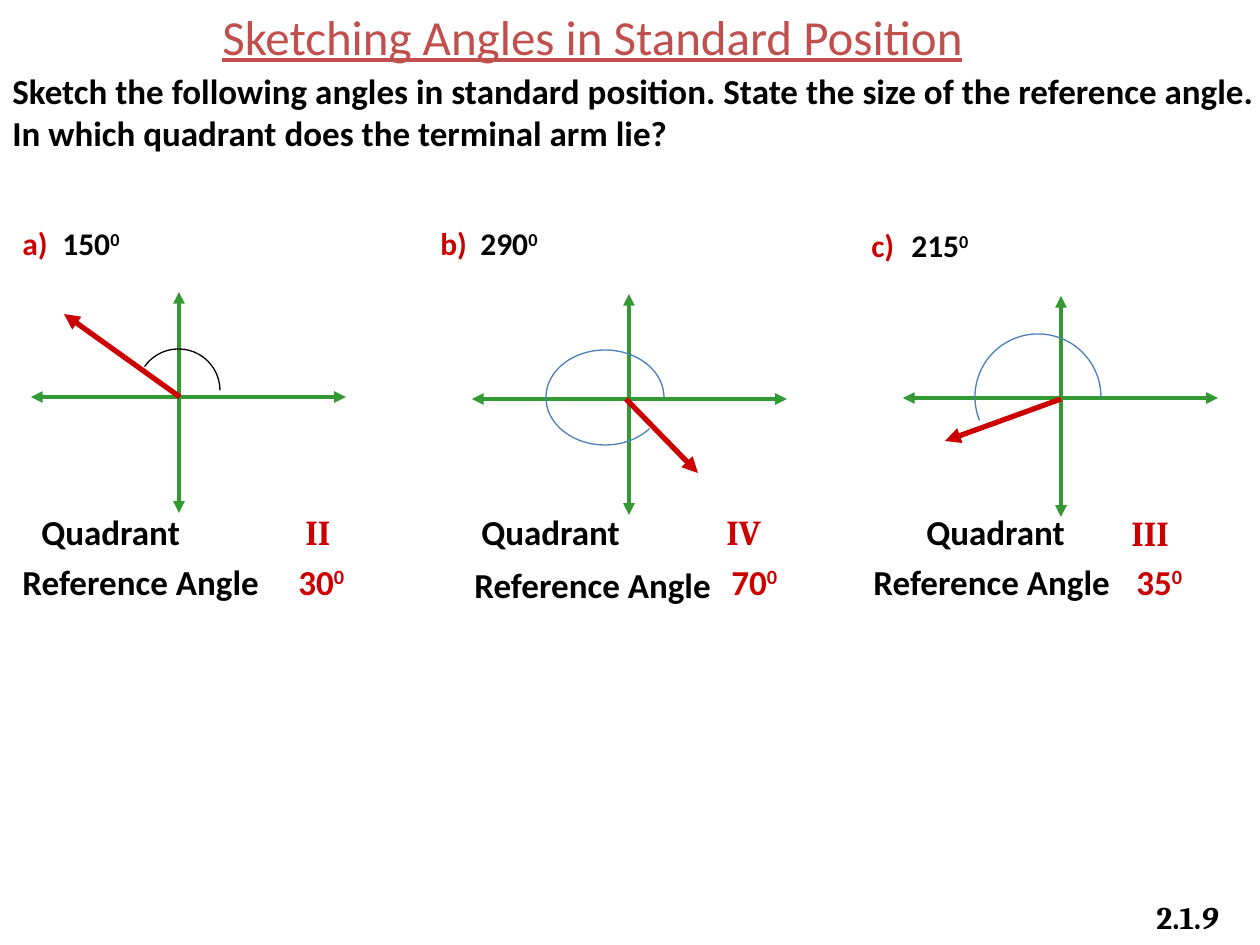
from dataclasses import dataclass

import pptx
import pptx.dml.color
import pptx.enum.dml
import pptx.enum.shapes
import pptx.enum.text
import pptx.oxml
import pptx.oxml.ns
import pptx.util

RGBColor = pptx.dml.color.RGBColor
BLACK = RGBColor(0x00, 0x00, 0x00)
WHITE = RGBColor(0xFF, 0xFF, 0xFF)
RED = RGBColor(0xCC, 0x00, 0x00)
GREEN = RGBColor(0x33, 0x99, 0x33)
BLUE = RGBColor(0x4B, 0x7E, 0xBC)
TITLE_RED = RGBColor(0xC0, 0x50, 0x4D)

EMU_PER_PX = 914400 / 126
AXIS_WIDTH, AXIS_HEIGHT = 315, 221
LABEL_TAB = 40
SHAPES = pptx.enum.shapes.MSO_SHAPE

Point = tuple[int, int]
Box = tuple[int, int, int, int]


@dataclass(frozen=True)
class Piece:
    """A stretch of text with one look."""
    text: str
    color: RGBColor = BLACK
    size: int = 20
    font: str = "Calibri"
    bold: bool = True
    italic: bool = False
    underline: bool = False
    raised: bool = False


@dataclass(frozen=True)
class Problem:
    letter: str
    degrees: str
    question_at: Point
    x_axis_start: Point
    y_axis_start: Point
    arm: tuple[Point, Point]
    arc_box: Box
    arc_start: int
    arc_color: RGBColor
    quadrant_label_at: Point
    quadrant: str
    quadrant_box: Box
    reference_label_at: Point
    reference: str
    reference_at: Point


PROBLEMS = [
    Problem("a)", "150", (10, 218), (31, 397), (179, 292), ((180, 397), (64, 314)),
            (137, 349, 83, 83), 215, BLACK, (29, 504), "II", (293, 504, 53, 55),
            (10, 554), "30", (286, 554)),
    Problem("b)", "290", (428, 218), (472, 399), (629, 294), ((626, 399), (698, 473)),
            (546, 350, 118, 95), 35, BLUE, (469, 504), "IV", (714, 504, 65, 55),
            (462, 557), "70", (719, 554)),
    Problem("c)", "215", (859, 220), (903, 398), (1061, 296), ((1061, 399), (945, 441)),
            (975, 334, 126, 126), 158, BLUE, (914, 504), "III", (1119, 505, 66, 55),
            (861, 554), "35", (1124, 554)),
]


def px(length: int) -> int:
    return round(length * EMU_PER_PX)


def write(shape, paragraphs: list[list[Piece]]) -> None:
    frame = shape.text_frame
    frame.word_wrap = False
    frame.auto_size = pptx.enum.text.MSO_AUTO_SIZE.SHAPE_TO_FIT_TEXT
    frame.vertical_anchor = pptx.enum.text.MSO_ANCHOR.TOP
    for index, pieces in enumerate(paragraphs):
        paragraph = frame.add_paragraph() if index else frame.paragraphs[0]
        paragraph.alignment = pptx.enum.text.PP_ALIGN.LEFT
        for piece in pieces:
            run = paragraph.add_run()
            run.text = piece.text
            formats = {"name": piece.font, "size": pptx.util.Pt(piece.size),
                       "bold": piece.bold, "italic": piece.italic,
                       "underline": piece.underline}
            for attribute, value in formats.items():
                setattr(run.font, attribute, value)
            run.font.color.rgb = piece.color
            if piece.raised:
                run._r.get_or_add_rPr().set("baseline", "30000")


def add_text(slide, box: Box, *paragraphs: list[Piece]):
    text_box = slide.shapes.add_textbox(*map(px, box))
    write(text_box, list(paragraphs))
    return text_box


def add_child(parent, tag: str, **attributes: str):
    child = pptx.oxml.ns.qn(tag)
    element = parent.makeelement(child, attributes)
    parent.append(element)
    return element


def add_arrow(slide, start: Point, end: Point, color: RGBColor, width: float,
              double: bool = False) -> None:
    arrow = slide.shapes.add_connector(
        pptx.enum.shapes.MSO_CONNECTOR.STRAIGHT, *map(px, start + end))
    arrow.line.color.rgb = color
    arrow.line.width = pptx.util.Pt(width)
    line = arrow.line._get_or_add_ln()
    for tag in ("a:headEnd", "a:tailEnd") if double else ("a:tailEnd",):
        add_child(line, tag, type="triangle")
    add_child(arrow._element.spPr, "a:effectLst")


def add_arc(slide, box: Box, start_degrees: int, color: RGBColor) -> None:
    """Draw clockwise from start_degrees to the positive x axis."""
    arc = slide.shapes.add_shape(SHAPES.ARC, *map(px, box))
    arc.adjustments[0] = start_degrees * 60000 / 100000
    arc.adjustments[1] = 0
    arc.fill.background()
    arc.line.color.rgb = color
    arc.line.width = pptx.util.Pt(0.75)
    arc.shadow.inherit = False


def add_question(slide, problem: Problem) -> None:
    question = add_text(slide, (*problem.question_at, 125, 50), [
        Piece(problem.letter + "\t", RED, 18), Piece(problem.degrees, size=18),
        Piece("0", size=18, raised=True)])
    properties = question.text_frame.paragraphs[0]._p.get_or_add_pPr()
    tabs = add_child(properties, "a:tabLst")
    add_child(tabs, "a:tab", pos=str(px(LABEL_TAB)), algn="l")


def add_problem(slide, problem: Problem) -> None:
    add_question(slide, problem)
    x, y = problem.y_axis_start
    add_arrow(slide, (x, y), (x, y + AXIS_HEIGHT), GREEN, 2.25, double=True)
    x, y = problem.x_axis_start
    add_arrow(slide, (x, y), (x + AXIS_WIDTH, y), GREEN, 2.25, double=True)
    add_arrow(slide, *problem.arm, RED, 3)
    add_arc(slide, problem.arc_box, problem.arc_start, problem.arc_color)
    add_text(slide, (*problem.quadrant_label_at, 165, 55), [Piece("Quadrant")])
    add_text(slide, problem.quadrant_box, [Piece(problem.quadrant, RED, font="Cambria")])
    add_text(slide, (*problem.reference_label_at, 265, 55), [Piece("Reference Angle")])
    add_text(slide, (*problem.reference_at, 73, 55),
             [Piece(problem.reference, RED), Piece("0", RED, raised=True)])


def add_page_number(slide) -> None:
    badge = slide.shapes.add_shape(SHAPES.RECTANGLE, *map(px, (1144, 892, 89, 50)))
    badge.shadow.inherit = False
    badge.line.fill.background()
    badge.fill.solid()
    badge.fill.fore_color.rgb = WHITE
    for color in badge._element.spPr.iter(pptx.oxml.ns.qn("a:srgbClr")):
        add_child(color, "a:alpha", val="50000")
    write(badge, [[Piece("2.1.", size=18, font="Cambria"),
                   Piece("9", size=18, font="Cambria", italic=True)]])


def main() -> None:
    presentation = pptx.Presentation()
    presentation.slide_width, presentation.slide_height = px(1260), px(945)
    slide = presentation.slides.add_slide(presentation.slide_layouts[6])
    add_text(slide, (210, 0, 829, 72), [
        Piece("Sketching Angles in Standard Position", TITLE_RED, 28,
              bold=False, underline=True)])
    add_text(slide, (0, 63, 1278, 97),
             [Piece("Sketch the following angles in standard position. "
                    "State the size of the reference angle.")],
             [Piece("In which quadrant does the terminal arm lie?")])
    for problem in PROBLEMS:
        add_problem(slide, problem)
    add_page_number(slide)
    presentation.save("out.pptx")


if __name__ == "__main__":
    main()
